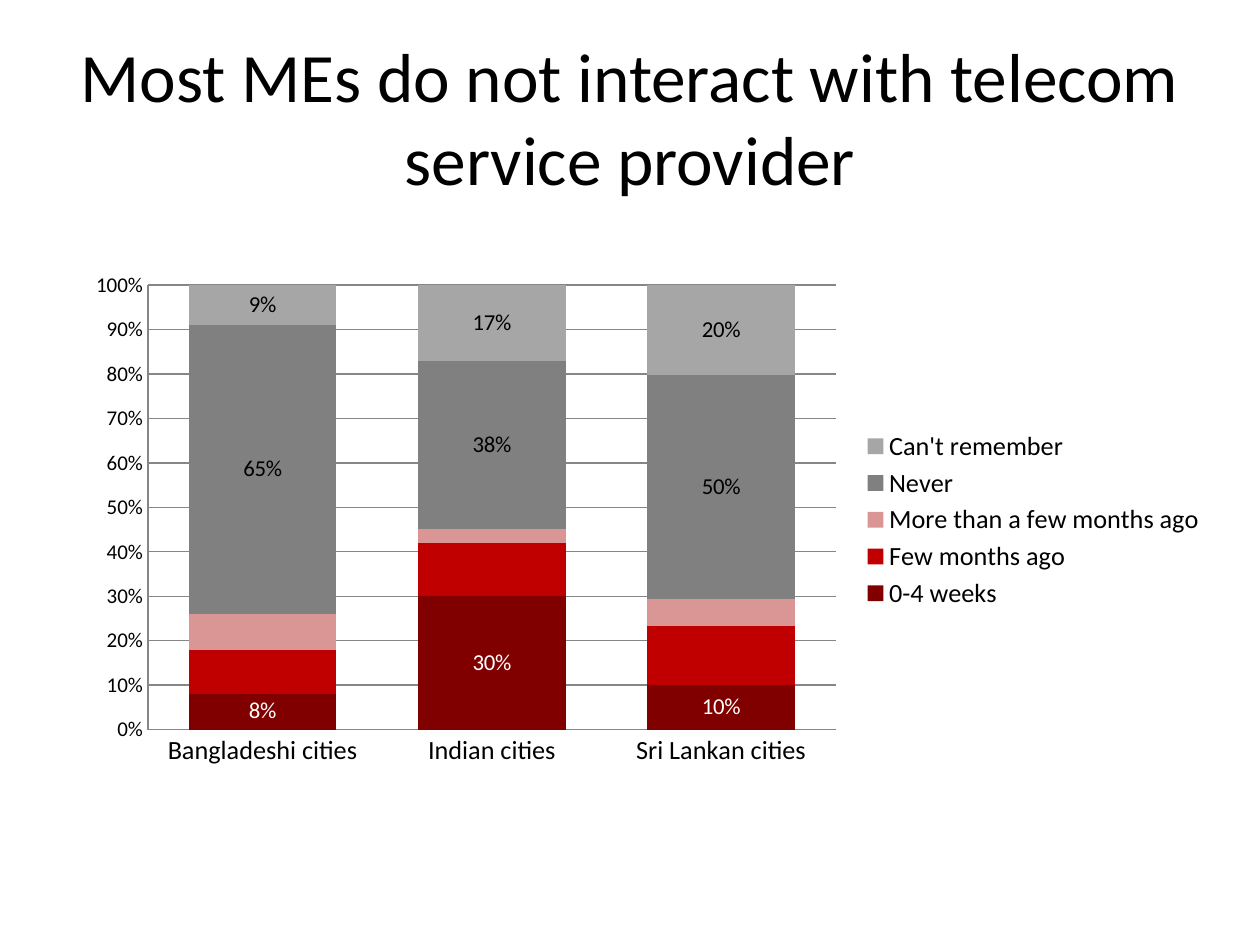
from dataclasses import dataclass

from lxml import etree
from pptx import Presentation
from pptx.chart.data import CategoryChartData
from pptx.dml.color import RGBColor
from pptx.enum.chart import XL_CHART_TYPE, XL_LABEL_POSITION, XL_LEGEND_POSITION, XL_TICK_MARK
from pptx.enum.text import MSO_ANCHOR, PP_ALIGN
from pptx.oxml.ns import qn
from pptx.util import Pt

STACKED_100 = XL_CHART_TYPE.COLUMN_STACKED_100
LEGEND_RIGHT = XL_LEGEND_POSITION.RIGHT
LABEL_CENTER = XL_LABEL_POSITION.CENTER
NO_TICK = XL_TICK_MARK.NONE
MIDDLE = MSO_ANCHOR.MIDDLE
CENTER = PP_ALIGN.CENTER


@dataclass(frozen=True)
class Theme:
    font: str = "Calibri"
    text: str = "000000"
    grid: str = "868686"
    title_size: float = 39.6
    category_size: float = 15
    value_size: float = 12
    label_size: float = 13


THEME = Theme()

TITLE = "Most MEs do not interact with telecom service provider"
CITIES = ["Bangladeshi cities", "Indian cities", "Sri Lankan cities"]
# name, share per city group, fill, label colour (None for no labels)
ANSWERS = [
    ("0-4 weeks", (0.08, 0.30, 0.10), "800000", "FFFFFF"),
    ("Few months ago", (0.10, 0.12, 0.13), "C00000", None),
    ("More than a few months ago", (0.08, 0.03, 0.06), "D99694", None),
    ("Never", (0.65, 0.38, 0.50), "808080", THEME.text),
    ("Can't remember", (0.09, 0.17, 0.20), "A6A6A6", THEME.text),
]

# left, top, width, height in points
TITLE_BOX = (36, 21.6, 648, 90)
CHART_BOX = (42, 150, 654, 294)
PLOT_BOX = (84.6, 163, 393, 254)


def style_font(font, size, color=THEME.text):
    formats = {"name": THEME.font, "size": Pt(size), "bold": False}
    for name, value in formats.items():
        setattr(font, name, value)
    font.color.rgb = RGBColor.from_string(color)


def style_line(line):
    line.color.rgb = RGBColor.from_string(THEME.grid)
    line.width = Pt(0.75)


def add_title(page, bounds):
    box = page.shapes.add_textbox(*map(Pt, bounds))
    frame = box.text_frame
    frame.word_wrap = True
    frame.vertical_anchor = MIDDLE
    para = frame.paragraphs[0]
    para.alignment = CENTER
    span = para.add_run()
    span.text = TITLE
    style_font(span.font, THEME.title_size)


def place_plot(chart, chart_bounds, plot_bounds):
    """Fix the inner plot area, as fractions of the chart's box."""
    left, top, width, height = chart_bounds
    plot_left, plot_top, plot_width, plot_height = plot_bounds
    settings = {
        "layoutTarget": "inner",
        "xMode": "edge",
        "yMode": "edge",
        "x": round((plot_left - left) / width, 3),
        "y": round((plot_top - top) / height, 3),
        "w": round(plot_width / width, 3),
        "h": round(plot_height / height, 3),
    }
    plot_area = chart.element.find(".//" + qn("c:plotArea"))
    layout = plot_area.find(qn("c:layout"))
    if layout is None:
        layout = etree.Element(qn("c:layout"))
        plot_area.insert(0, layout)
    manual = etree.SubElement(layout, qn("c:manualLayout"))
    for name, value in settings.items():
        etree.SubElement(manual, qn("c:" + name)).set("val", str(value))


def style_axes(chart):
    sizes = (
        (chart.category_axis, THEME.category_size),
        (chart.value_axis, THEME.value_size),
    )
    for axis, size in sizes:
        axis.major_tick_mark = NO_TICK
        axis.minor_tick_mark = NO_TICK
        style_font(axis.tick_labels.font, size)
        style_line(axis.format.line)
    value_axis = chart.value_axis
    formats = {"minimum_scale": 0, "maximum_scale": 1, "major_unit": 0.1,
               "has_major_gridlines": True}
    for name, value in formats.items():
        setattr(value_axis, name, value)
    style_line(value_axis.major_gridlines.format.line)
    value_axis.tick_labels.number_format = "0%"
    value_axis.tick_labels.number_format_is_linked = False


def add_labels(series, color):
    labels = series.data_labels
    formats = {"show_value": True, "number_format": "0%",
               "number_format_is_linked": False, "position": LABEL_CENTER}
    for name, value in formats.items():
        setattr(labels, name, value)
    style_font(labels.font, THEME.label_size, color)


def add_contact_chart(page, bounds, plot_bounds):
    chart_data = CategoryChartData(number_format="0%")
    chart_data.categories = CITIES
    for name, shares, _, _ in ANSWERS:
        chart_data.add_series(name, shares)
    chart = page.shapes.add_chart(STACKED_100, *map(Pt, bounds), chart_data).chart
    chart.has_title = False
    style_font(chart.font, 10)
    place_plot(chart, bounds, plot_bounds)
    style_axes(chart)

    plot = chart.plots[0]
    for name, value in {"gap_width": 55, "overlap": 100, "vary_by_categories": False}.items():
        setattr(plot, name, value)
    for series, (_, _, fill, label_color) in zip(plot.series, ANSWERS):
        series.format.fill.solid()
        series.format.fill.fore_color.rgb = RGBColor.from_string(fill)
        if label_color:
            add_labels(series, label_color)

    chart.has_legend = True
    chart.legend.position = LEGEND_RIGHT
    chart.legend.include_in_layout = False
    style_font(chart.legend.font, THEME.category_size)


def main():
    deck = Presentation()
    deck.slide_width, deck.slide_height = Pt(720), Pt(540)
    page = deck.slides.add_slide(deck.slide_layouts[6])
    add_title(page, TITLE_BOX)
    add_contact_chart(page, CHART_BOX, PLOT_BOX)
    deck.save("out.pptx")


if __name__ == "__main__":
    main()
